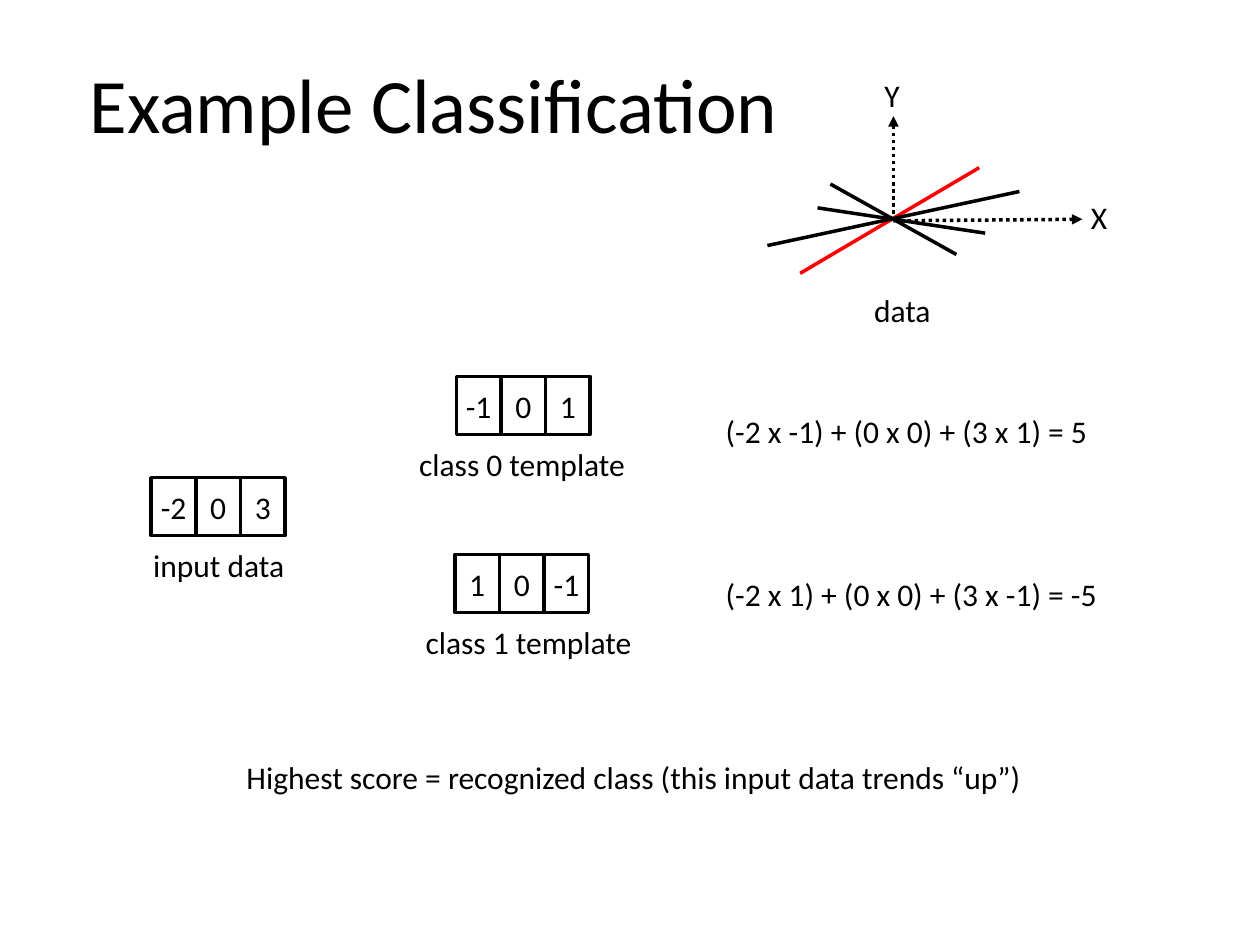
from lxml.etree import SubElement
from pptx import Presentation
from pptx.dml.color import RGBColor
from pptx.enum.dml import MSO_LINE as Dash
from pptx.enum.shapes import MSO_CONNECTOR as Connector, MSO_SHAPE as Preset
from pptx.enum.text import MSO_ANCHOR as Anchor, MSO_AUTO_SIZE as AutoSize, PP_ALIGN as Align
from pptx.oxml.ns import qn
from pptx.util import Cm, Pt

COLORS = {"ink": "000000", "highlight": "FF0000"}
FONT = "Calibri"
LINE_WIDTH = Pt(2)
TEXT_HEIGHT = 1.02
CELL_WIDTH, CELL_HEIGHT = 0.9, 1.17


def write_text(shape, text, size=18, align=Align.LEFT, anchor=Anchor.TOP,
               wrap=True, grow=True, margin=None):
    """Write one formatted paragraph into a shape."""
    frame = shape.text_frame
    frame.text = text
    frame.word_wrap = wrap
    frame.auto_size = AutoSize.SHAPE_TO_FIT_TEXT if grow else AutoSize.NONE
    frame.vertical_anchor = anchor
    if margin is not None:
        frame.margin_left = frame.margin_right = margin
    paragraph = frame.paragraphs[0]
    paragraph.alignment = align
    font = paragraph.runs[0].font
    font.name, font.size = FONT, Pt(size)
    font.color.rgb = RGBColor.from_string(COLORS["ink"])


def add_label(slide, text, left, top, width, **text_format):
    """Add a one-line text box, measured in centimetres."""
    box = slide.shapes.add_textbox(Cm(left), Cm(top), Cm(width), Cm(TEXT_HEIGHT))
    write_text(box, text, **text_format)


def add_line(slide, start, end, color="ink", arrow=False):
    """Add a solid line, or a dotted one with an arrowhead."""
    line = slide.shapes.add_connector(
        Connector.STRAIGHT, *(Cm(length) for length in (*start, *end)))
    line.line.color.rgb = RGBColor.from_string(COLORS[color])
    line.line.width = LINE_WIDTH
    if arrow:
        line.line.dash_style = Dash.ROUND_DOT
        SubElement(line.line._get_or_add_ln(), qn("a:tailEnd"), type="triangle")
    SubElement(line._element.spPr, qn("a:effectLst"))


def add_title(slide, text, left, top, width, height):
    """Place the title placeholder."""
    title = slide.shapes.title
    title.left, title.top, title.width, title.height = (
        Cm(length) for length in (left, top, width, height))
    write_text(title, text, size=44, wrap=False)


def add_data_plot(slide, left, top):
    """Draw the axes and trend lines around an origin."""
    def place(point):
        return left + point[0], top + point[1]

    for tip in ((0, -2.11), (3.81, -0.03)):
        add_line(slide, (left, top), place(tip), arrow=True)
    trends = [
        ((-1.88, 1.06), (1.73, -1.07), "highlight"),
        ((-1.53, -0.26), (1.85, 0.25), "ink"),
        ((-1.27, -0.74), (1.27, 0.68), "ink"),
        ((-2.54, 0.5), (2.54, -0.59), "ink"),
    ]
    for start, end, color in trends:
        add_line(slide, place(start), place(end), color)
    add_label(slide, "Y", *place((-0.43, -3.05)), 0.84, wrap=False)
    add_label(slide, "X", *place((3.73, -0.59)), 0.84, wrap=False)
    add_label(slide, "data", *place((-0.64, 1.29)), 1.9)


def add_vector(slide, values, caption, left, top, caption_shift, caption_width):
    """Draw a row of value cells with a caption below."""
    for index, value in enumerate(values):
        cell = slide.shapes.add_shape(
            Preset.RECTANGLE, Cm(left + index * CELL_WIDTH), Cm(top),
            Cm(CELL_WIDTH), Cm(CELL_HEIGHT))
        cell.shadow.inherit = False
        cell.fill.background()
        cell.line.color.rgb = RGBColor.from_string(COLORS["ink"])
        cell.line.width = LINE_WIDTH
        write_text(cell, str(value), align=Align.CENTER, anchor=Anchor.MIDDLE,
                   wrap=False, grow=False, margin=0)
    add_label(slide, caption, left + caption_shift, top + 1.26, caption_width)


def main():
    """Build and save the slide."""
    presentation = Presentation()
    presentation.slide_width, presentation.slide_height = Cm(25.4), Cm(19.05)
    slide = presentation.slides.add_slide(presentation.slide_layouts[5])

    add_title(slide, "Example Classification", 1.55, 1.02, 14.55, 2.13)
    add_data_plot(slide, 18.01, 4.45)
    add_vector(slide, (-2, 0, 3), "input data", 3.05, 9.63, -0.21, 3.25)
    add_vector(slide, (-1, 0, 1), "class 0 template", 9.2, 7.59, -1, 4.88)
    add_vector(slide, (1, 0, -1), "class 1 template", 9.17, 11.18, -0.84, 4.78)
    add_label(slide, "(-2 x -1) + (0 x 0) + (3 x 1) = 5", 14.38, 8.18, 7.92)
    add_label(slide, "(-2 x 1) + (0 x 0) + (3 x -1) = -5", 14.38, 11.46, 8.23)
    add_label(slide, "Highest score = recognized class (this input data trends “up”)",
              4.72, 15.16, 17.09)

    presentation.save("out.pptx")


if __name__ == "__main__":
    main()
